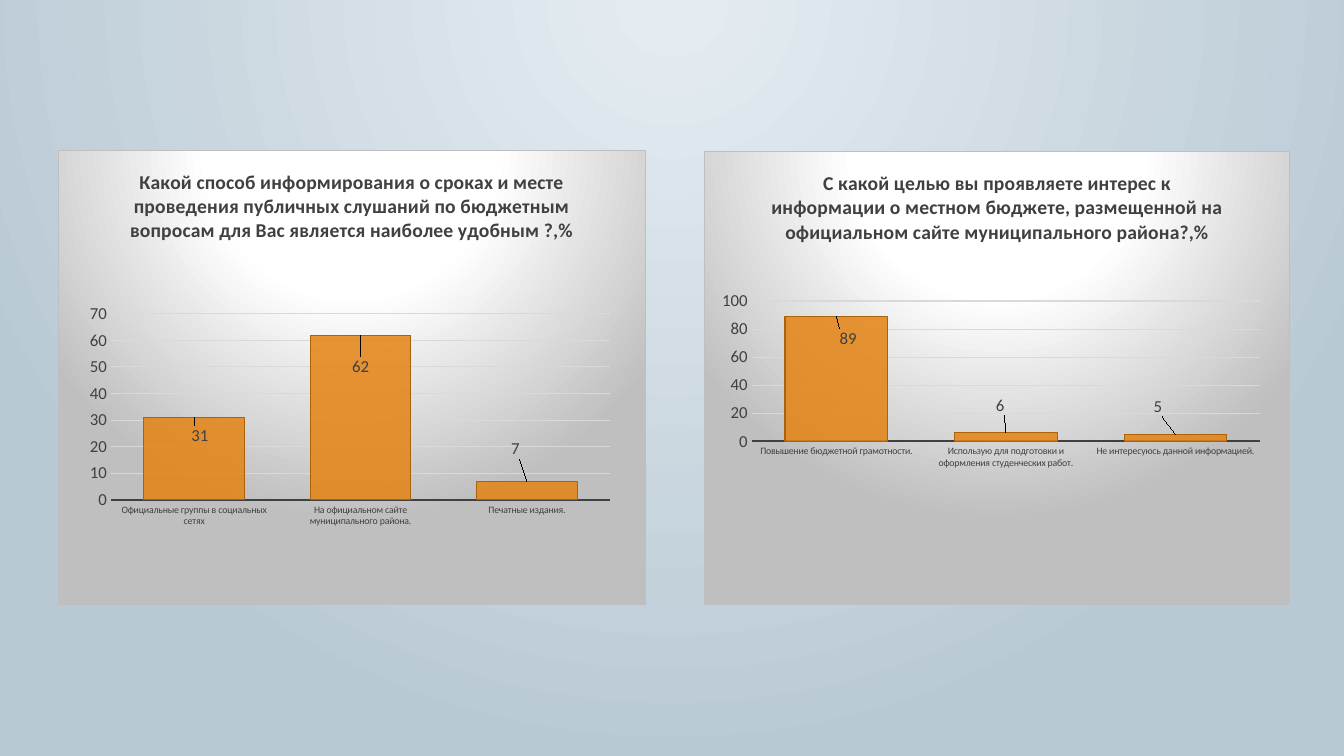
import pptx
import pptx.util
import pptx.chart.data
import pptx.dml.color
import pptx.enum.chart
import pptx.oxml
import pptx.oxml.ns

Cm = pptx.util.Cm
Pt = pptx.util.Pt
NAMESPACES = pptx.oxml.ns.nsdecls("a", "c")


def color(value):
    return pptx.dml.color.RGBColor.from_string(value)


def radial_fill(stops, center):
    stops_xml = "".join(
        f'<a:gs pos="{position * 1000}"><a:srgbClr val="{value}"/></a:gs>'
        for position, value in stops
    )
    left, top, right, bottom = (side * 1000 for side in center)
    return (
        f'<a:gradFill {NAMESPACES} rotWithShape="1"><a:gsLst>{stops_xml}</a:gsLst>'
        f'<a:path path="circle"><a:fillToRect l="{left}" t="{top}" r="{right}" '
        f'b="{bottom}"/></a:path></a:gradFill>'
    )


def manual_layout(x, y, size=None):
    target = mode = extent = ""
    if size:
        target = '<c:layoutTarget val="inner"/>'
        mode = '<c:xMode val="edge"/><c:yMode val="edge"/>'
        extent = f'<c:w val="{size[0]}"/><c:h val="{size[1]}"/>'
    return pptx.oxml.parse_xml(
        f'<c:layout {NAMESPACES}><c:manualLayout>{target}{mode}'
        f'<c:x val="{x}"/><c:y val="{y}"/>{extent}</c:manualLayout></c:layout>'
    )


class SurveySlide:
    font = "Calibri"
    text = "404040"
    grid = "D9D9D9"
    border = "BFBFBF"
    bar = "E48312"
    bar_edge = "AB620D"

    def __init__(self, presentation):
        self.slide = presentation.slides.add_slide(presentation.slide_layouts[6])

    def style_font(self, font, size, bold=False):
        font.name = self.font
        font.size = Pt(size)
        font.bold = bold
        font.color.rgb = color(self.text)

    def style_line(self, line, value, width):
        line.color.rgb = color(value)
        line.width = Pt(width)

    def background(self, stops, center):
        fill = self.slide.background.fill
        fill.gradient()
        properties = self.slide.element.xpath("p:cSld/p:bg/p:bgPr")[0]
        properties.replace(
            properties.xpath("a:gradFill")[0],
            pptx.oxml.parse_xml(radial_fill(stops, center)),
        )

    def survey(self, question, answers, box, plot_area, scale, label_shifts):
        data = pptx.chart.data.CategoryChartData()
        data.categories = list(answers)
        data.add_series("Series 1", list(answers.values()))
        chart = self.slide.shapes.add_chart(
            pptx.enum.chart.XL_CHART_TYPE.COLUMN_CLUSTERED,
            *(Cm(length) for length in box), data,
        ).chart
        self.style_font(chart.font, 10)
        chart.has_legend = False
        self.panel(chart)
        self.question(chart, question)
        self.axes(chart, scale)
        self.bars(chart.plots[0], label_shifts)
        area = chart.element.xpath("c:chart/c:plotArea")[0]
        for layout in area.xpath("c:layout"):
            area.remove(layout)
        area.insert(0, manual_layout(*plot_area[:2], plot_area[2:]))

    def panel(self, chart):
        fill = radial_fill(
            [(0, "FFFFFF"), (39, "FFFFFF"), (100, self.border)], (50, -80, 50, 180)
        )
        chart.element.xpath("c:chart")[0].addnext(pptx.oxml.parse_xml(
            f'<c:spPr {NAMESPACES}>{fill}<a:ln w="{Pt(0.75)}"><a:solidFill>'
            f'<a:srgbClr val="{self.border}"/></a:solidFill></a:ln></c:spPr>'
        ))

    def question(self, chart, wording):
        chart.has_title = True
        chart.chart_title.include_in_layout = False
        run = chart.chart_title.text_frame.paragraphs[0].add_run()
        run.text = wording
        self.style_font(run.font, 14, bold=True)

    def axes(self, chart, scale):
        none = pptx.enum.chart.XL_TICK_MARK.NONE
        for axis, size in ((chart.category_axis, 7), (chart.value_axis, 12)):
            axis.major_tick_mark = axis.minor_tick_mark = none
            self.style_font(axis.tick_labels.font, size)
        self.style_line(chart.category_axis.format.line, self.text, 1.5)
        values = chart.value_axis
        values.minimum_scale = 0
        values.maximum_scale, values.major_unit = scale
        values.format.line.fill.background()
        self.style_line(values.major_gridlines.format.line, self.grid, 0.75)

    def bars(self, plot, label_shifts):
        plot.gap_width = 65
        plot.vary_by_categories = False
        series = plot.series[0]
        series.format.fill.solid()
        series.format.fill.fore_color.rgb = color(self.bar)
        self.style_line(series.format.line, self.bar_edge, 0.75)
        shade = series.format.fill.fore_color
        shade_xml = series.format.element if hasattr(series.format, "element") else None
        bar_color = plot.series[0]._element.xpath("c:spPr/a:solidFill/a:srgbClr")[0]
        bar_color.append(pptx.oxml.parse_xml(f'<a:alpha {NAMESPACES} val="85000"/>'))
        outside = pptx.enum.chart.XL_LABEL_POSITION.OUTSIDE_END
        labels = series.data_labels
        labels.show_value = True
        labels.position = outside
        self.style_font(labels.font, 12)
        for index, shift in enumerate(label_shifts):
            label = series.points[index].data_label
            self.style_font(label.font, 12)
            label.position = outside
            place = bar_color.xpath(f"ancestor::c:ser/c:dLbls/c:dLbl/c:idx[@val={index}]")[0]
            place.addnext(manual_layout(*shift))


def main():
    presentation = pptx.Presentation()
    presentation.slide_width = Cm(33.87)
    presentation.slide_height = Cm(19.05)
    page = SurveySlide(presentation)
    page.background([(3, "E4ECF1"), (100, "B9C9D4")], (43, 0, 43, 100))
    page.survey(
        "Какой способ информирования о сроках и месте проведения публичных слушаний "
        "по бюджетным вопросам для Вас является наиболее удобным ?,%",
        {
            "Официальные группы в социальных сетях": 31,
            "На официальном сайте муниципального района.": 62,
            "Печатные издания.": 7,
        },
        (1.45, 3.78, 14.83, 11.46), (0.09, 0.36, 0.85, 0.41), (70, 10),
        [(0.01, 0.07), (0, 0.1), (-0.02, -0.04)],
    )
    page.survey(
        "С какой целью вы проявляете интерес к информации о местном бюджете, "
        "размещенной на официальном сайте муниципального района?,%",
        {
            "Повышение бюджетной грамотности.": 89,
            "Использую для подготовки и оформления студенческих работ.": 6,
            "Не интересуюсь данной информацией.": 5,
        },
        (17.75, 3.81, 14.76, 11.43), (0.08, 0.33, 0.87, 0.31), (100, 20),
        [(0.02, 0.08), (-0.01, -0.03), (-0.03, -0.03)],
    )
    presentation.save("out.pptx")


if __name__ == "__main__":
    main()
